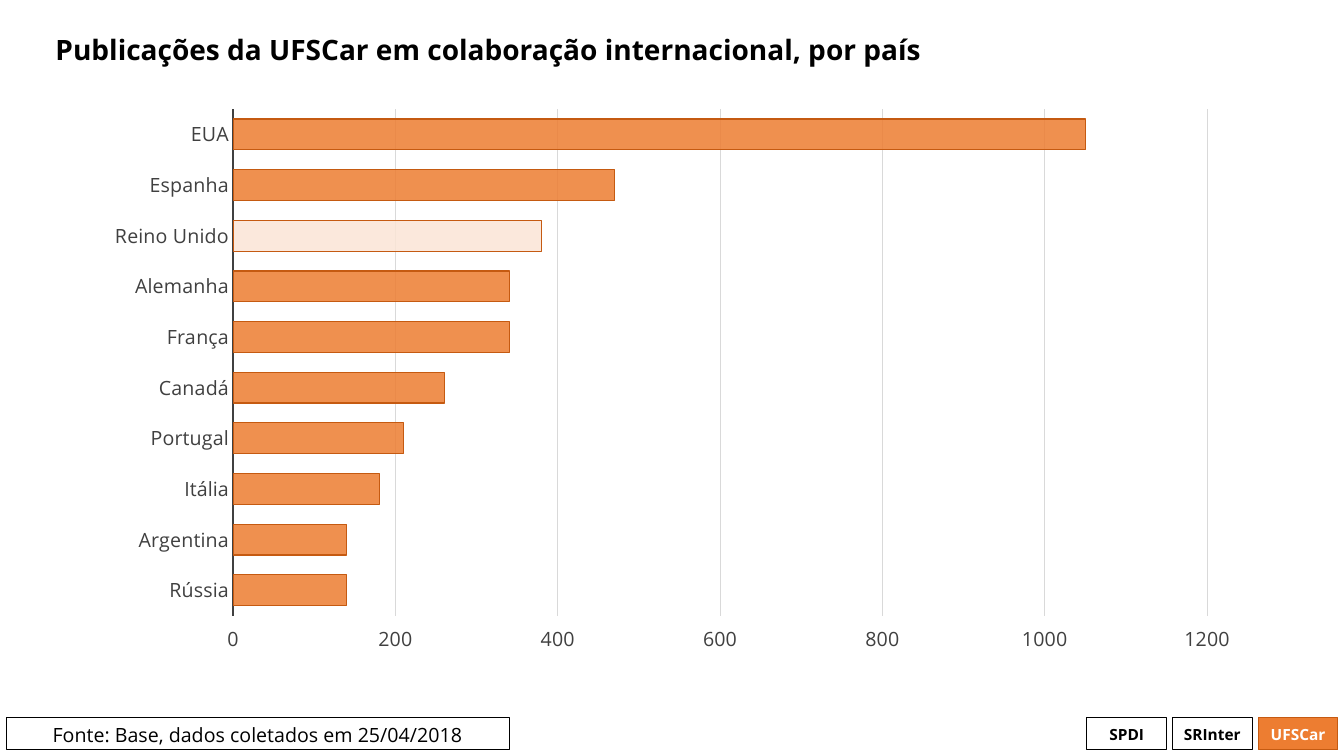
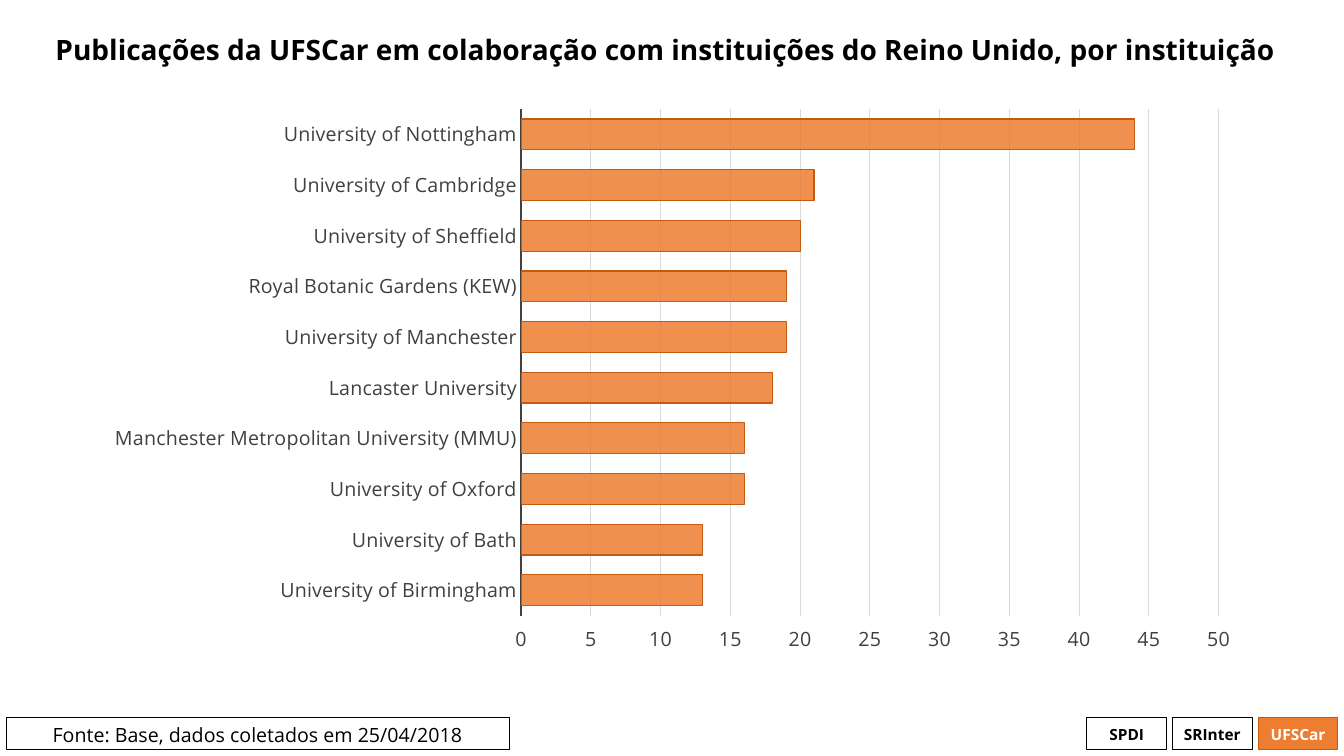
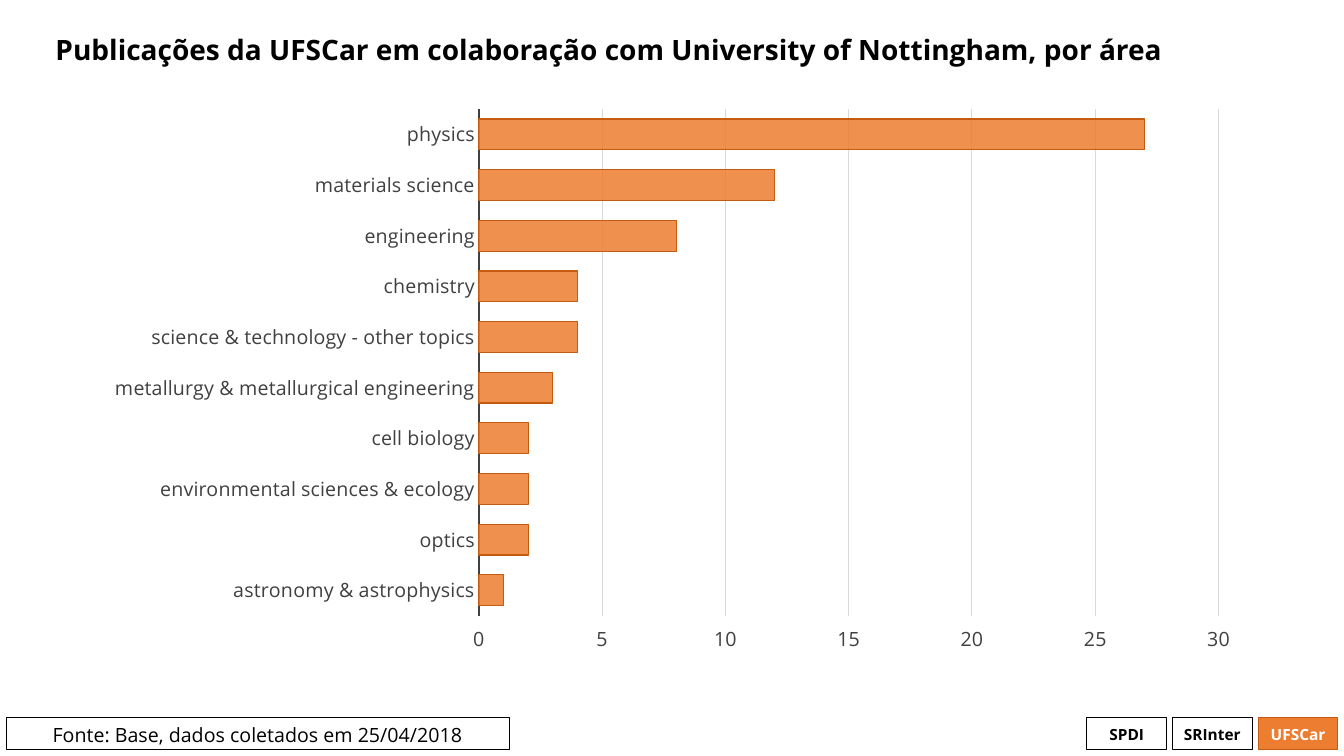
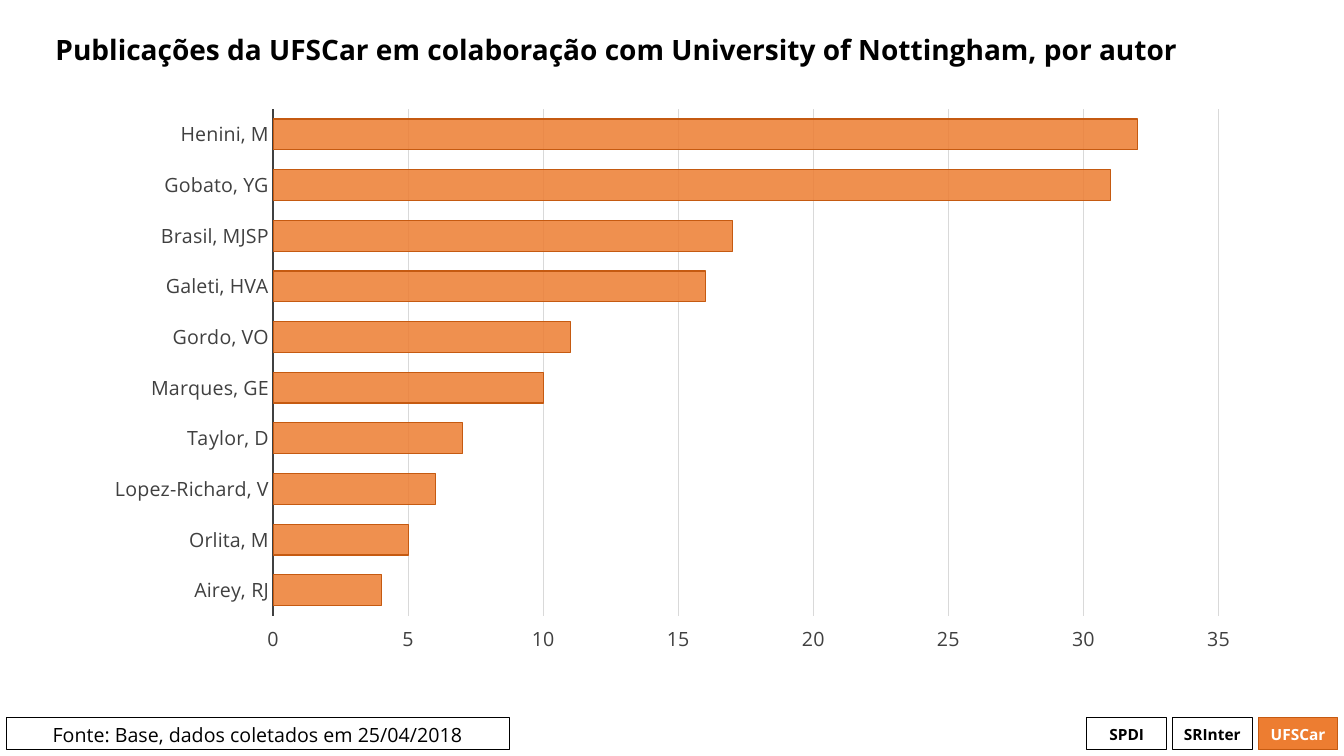
"""Build four slides of bar charts on international research collaboration."""
from dataclasses import dataclass

from pptx import Presentation
from pptx.chart.data import CategoryChartData
from pptx.dml.color import RGBColor
from pptx.enum.chart import XL_CHART_TYPE, XL_TICK_LABEL_POSITION, XL_TICK_MARK
from pptx.enum.shapes import MSO_SHAPE
from pptx.enum.text import MSO_ANCHOR, MSO_AUTO_SIZE, PP_ALIGN
from pptx.oxml.ns import qn
from pptx.util import Inches, Pt

BAR_CLUSTERED = XL_CHART_TYPE.BAR_CLUSTERED
LABELS_HIGH = XL_TICK_LABEL_POSITION.HIGH
NO_TICK = XL_TICK_MARK.NONE
RECTANGLE = MSO_SHAPE.RECTANGLE
TOP, MIDDLE = MSO_ANCHOR.TOP, MSO_ANCHOR.MIDDLE
LEFT, CENTER = PP_ALIGN.LEFT, PP_ALIGN.CENTER
NO_AUTOFIT = MSO_AUTO_SIZE.NONE
TITLE_ONLY = 5


@dataclass(frozen=True)
class Theme:
    """Colours, type sizes and line widths shared by the slides."""

    font: str = "Open Sans"
    black: RGBColor = RGBColor.from_string("000000")
    white: RGBColor = RGBColor.from_string("FFFFFF")
    orange: RGBColor = RGBColor.from_string("ED7D31")
    dark_orange: RGBColor = RGBColor.from_string("C55A11")
    pale_orange: RGBColor = RGBColor.from_string("FBE5D6")
    axis: RGBColor = RGBColor.from_string("404040")
    grid: RGBColor = RGBColor.from_string("D9D9D9")
    title_size: int = 20
    body_size: int = 14
    tag_size: int = 11
    thin: float = 0.75
    thick: float = 1.5
    bar_opacity: int = 85


THEME = Theme()
TITLE_BOX = (0.45, 0.06, 12.41, 0.91)
CHART_BOX = (0.91, 0.97, 11.52, 5.62)
SOURCE_BOX = (0.06, 7.12, 4.99, 0.32)
TAGS_BOX = (10.78, 7.12, 2.49, 0.32)
TAG_GAP = 0.06
TAGS = ("SPDI", "SRInter", "UFSCar")
ACTIVE_TAG = "UFSCar"
SOURCE = "Fonte: Base, dados coletados em 25/04/2018"

CHARTS = (
    {
        "title": "Publicações da UFSCar em colaboração internacional, por país",
        "rows": {
            "EUA": 1050, "Espanha": 470, "Reino Unido": 380, "Alemanha": 340,
            "França": 340, "Canadá": 260, "Portugal": 210, "Itália": 180,
            "Argentina": 140, "Rússia": 140,
        },
        "maximum": 1200,
        "step": 200,
        "highlight": "Reino Unido",
    },
    {
        "title": "Publicações da UFSCar em colaboração com instituições do Reino Unido, por instituição",
        "rows": {
            "University of Nottingham": 44, "University of Cambridge": 21,
            "University of Sheffield": 20, "Royal Botanic Gardens (KEW)": 19,
            "University of Manchester": 19, "Lancaster University": 18,
            "Manchester Metropolitan University (MMU)": 16,
            "University of Oxford": 16, "University of Bath": 13,
            "University of Birmingham": 13,
        },
        "maximum": 50,
    },
    {
        "title": "Publicações da UFSCar em colaboração com University of Nottingham, por área",
        "rows": {
            "physics": 27, "materials science": 12, "engineering": 8,
            "chemistry": 4, "science & technology - other topics": 4,
            "metallurgy & metallurgical engineering": 3, "cell biology": 2,
            "environmental sciences & ecology": 2, "optics": 2,
            "astronomy & astrophysics": 1,
        },
        "maximum": 30,
    },
    {
        "title": "Publicações da UFSCar em colaboração com University of Nottingham, por autor",
        "rows": {
            "Henini, M": 32, "Gobato, YG": 31, "Brasil, MJSP": 17,
            "Galeti, HVA": 16, "Gordo, VO": 11, "Marques, GE": 10,
            "Taylor, D": 7, "Lopez-Richard, V": 6, "Orlita, M": 5,
            "Airey, RJ": 4,
        },
        "maximum": 35,
    },
)


def to_lengths(box):
    """Turn a box in inches into lengths."""
    return [Inches(value) for value in box]


def format_font(font, size, color, bold=False):
    """Set the typeface, size, colour and weight of a font."""
    font.name = THEME.font
    font.size = Pt(size)
    font.bold = bold
    font.color.rgb = color


def format_line(line, color, width=THEME.thin):
    """Set the colour and width of a line."""
    line.color.rgb = color
    line.width = Pt(width)


def write_text(shape, text, *, size=THEME.body_size, color=THEME.black, bold=False,
               alignment=CENTER, anchor=MIDDLE, line_spacing=None):
    """Write one formatted paragraph into a shape."""
    frame = shape.text_frame
    frame.word_wrap = True
    frame.auto_size = NO_AUTOFIT
    frame.vertical_anchor = anchor
    paragraph = frame.paragraphs[0]
    paragraph.alignment = alignment
    paragraph.line_spacing = line_spacing
    run = paragraph.add_run()
    run.text = text
    format_font(run.font, size, color, bold)


def add_box(slide, box, text, *, fill=None, line=THEME.black, **text_format):
    """Add an outlined rectangle with text."""
    shape = slide.shapes.add_shape(RECTANGLE, *to_lengths(box))
    shape.shadow.inherit = False
    if fill is None:
        shape.fill.background()
    else:
        shape.fill.solid()
        shape.fill.fore_color.rgb = fill
    format_line(shape.line, line)
    write_text(shape, text, **text_format)
    return shape


def add_tags(slide, box):
    """Add the row of unit tags and stress the active one."""
    left, top, width, height = box
    tag_width = (width - TAG_GAP * (len(TAGS) - 1)) / len(TAGS)
    shapes = []
    for index, tag in enumerate(TAGS):
        colors = {}
        if tag == ACTIVE_TAG:
            colors = {"fill": THEME.orange, "line": THEME.dark_orange, "color": THEME.white}
        tag_box = (left + index * (tag_width + TAG_GAP), top, tag_width, height)
        shapes.append(add_box(slide, tag_box, tag, size=THEME.tag_size, bold=True, **colors))
    return shapes


def move_footer_to_layout(slide):
    """Draw the footer once and keep it on the layout of the slide."""
    shapes = add_tags(slide, TAGS_BOX)
    shapes.append(add_box(slide, SOURCE_BOX, SOURCE, anchor=TOP))
    for shape in shapes:
        slide.slide_layout.shapes.element.append(shape.element)


def add_title(slide, box, text):
    """Place and format the title placeholder."""
    title = slide.shapes.title
    title.left, title.top, title.width, title.height = to_lengths(box)
    write_text(title, text, size=THEME.title_size, bold=True, alignment=LEFT, line_spacing=0.9)


def format_bars(item, color):
    """Set the fill and outline of a series or point."""
    item.format.fill.solid()
    item.format.fill.fore_color.rgb = color
    format_line(item.format.line, THEME.dark_orange)


def format_axes(chart, maximum, step):
    """Set the scale, lines and labels of both axes."""
    categories, values = chart.category_axis, chart.value_axis
    for axis in (categories, values):
        axis.major_tick_mark = axis.minor_tick_mark = NO_TICK
        format_font(axis.tick_labels.font, THEME.body_size, THEME.axis)
    categories.reverse_order = True
    categories.has_major_gridlines = False
    format_line(categories.format.line, THEME.axis, THEME.thick)
    values.tick_label_position = LABELS_HIGH
    values.minimum_scale = 0
    values.maximum_scale = maximum
    values.major_unit = step
    values.format.line.fill.background()
    values.has_major_gridlines = True
    format_line(values.major_gridlines.format.line, THEME.grid)


def add_bar_chart(slide, box, rows, maximum, step=5, highlight=None):
    """Add a bar chart of the rows, with one bar optionally paler."""
    data = CategoryChartData()
    data.categories = list(rows)
    data.add_series("Series 1", list(rows.values()))
    chart = slide.shapes.add_chart(BAR_CLUSTERED, *to_lengths(box), data).chart
    chart.has_title = chart.has_legend = False
    format_font(chart.font, THEME.body_size, THEME.black)
    format_axes(chart, maximum, step)
    plot = chart.plots[0]
    plot.gap_width = 65
    plot.vary_by_categories = False
    series = plot.series[0]
    format_bars(series, THEME.orange)
    if highlight:
        format_bars(series.points[list(rows).index(highlight)], THEME.pale_orange)
    for color in chart.element.xpath(".//c:ser//c:spPr/a:solidFill/a:srgbClr"):
        alpha = color.makeelement(qn("a:alpha"), {"val": str(THEME.bar_opacity * 1000)})
        color.append(alpha)


def add_chart_slide(presentation, title, **chart_settings):
    """Add a slide with a title and a bar chart."""
    slide = presentation.slides.add_slide(presentation.slide_layouts[TITLE_ONLY])
    add_title(slide, TITLE_BOX, title)
    add_bar_chart(slide, CHART_BOX, **chart_settings)


def main():
    """Build and save the presentation."""
    presentation = Presentation()
    presentation.slide_width = Inches(13.33)
    presentation.slide_height = Inches(7.5)
    for settings in CHARTS:
        add_chart_slide(presentation, **settings)
    move_footer_to_layout(presentation.slides[0])
    presentation.save("out.pptx")


if __name__ == "__main__":
    main()
